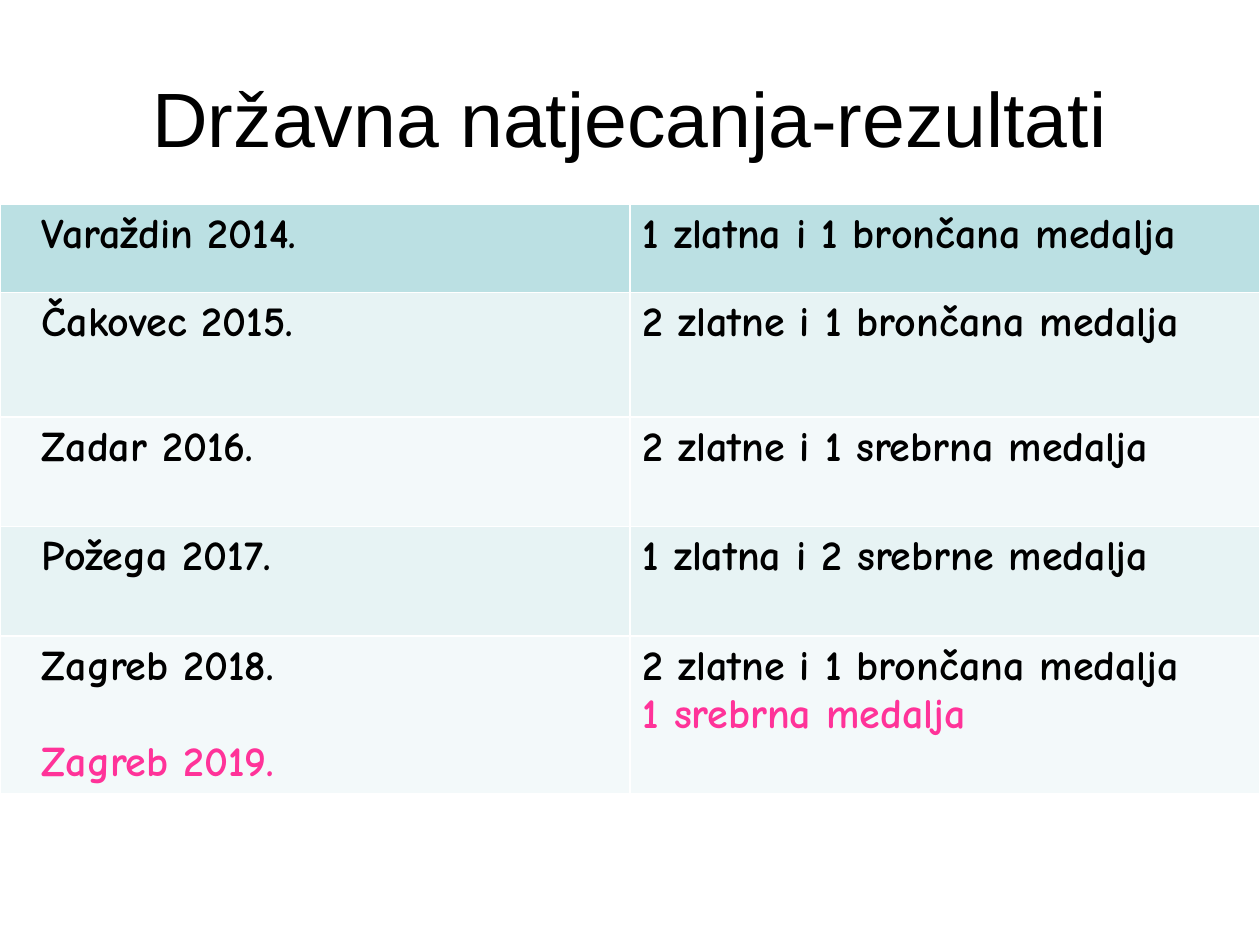
import dataclasses

import lxml.etree
import pptx
import pptx.dml.color
import pptx.enum.text
import pptx.oxml.ns
import pptx.util

Inches = pptx.util.Inches
Pt = pptx.util.Pt


@dataclasses.dataclass(frozen=True)
class Theme:
    text: str = "000000"
    accent: str = "FF3399"
    header_fill: str = "BBE0E3"
    band_fills: tuple[str, str] = ("E7F3F4", "F3F9FA")
    border: str = "FFFFFF"
    title_font: str = "Arial"
    table_font: str = "Comic Neue"
    title_size: int = 44
    table_size: int = 24


@dataclasses.dataclass(frozen=True)
class Line:
    text: str
    color: str
    space_before: float = 0


@dataclasses.dataclass(frozen=True)
class Competition:
    places: list[Line]
    medals: list[Line]
    height: float


THEME = Theme()


def black(text: str) -> list[Line]:
    return [Line(text, THEME.text)]


COMPETITIONS = [
    Competition(black("Varaždin 2014."), black("1 zlatna i 1 brončana medalja"), 0.7),
    Competition(black("Čakovec 2015."), black("2 zlatne i 1 brončana medalja"), 0.99),
    Competition(black("Zadar 2016."), black("2 zlatne i 1 srebrna medalja"), 0.87),
    Competition(black("Požega 2017."), black("1 zlatna i 2 srebrne medalja"), 0.87),
    Competition(
        black("Zagreb 2018.") + [Line("Zagreb 2019.", THEME.accent, 27.5)],
        black("2 zlatne i 1 brončana medalja") + [Line("1 srebrna medalja", THEME.accent)],
        1.25,
    ),
]


def write(paragraph, text: str, *, font: str, size: float, color: str,
          bold: bool = False, align=None, space_before: float = 0) -> None:
    paragraph.alignment = align
    if space_before:
        paragraph.space_before = Pt(space_before)
    run = paragraph.add_run()
    run.text = text
    run.font.name = font
    run.font.size = Pt(size)
    run.font.bold = bold
    run.font.color.rgb = pptx.dml.color.RGBColor.from_string(color)


def add_borders(cell, color: str, width: float) -> None:
    properties = cell._tc.get_or_add_tcPr()
    qn = pptx.oxml.ns.qn
    for side in ("lnL", "lnR", "lnT", "lnB"):
        border = lxml.etree.SubElement(properties, qn(f"a:{side}"), w=str(Pt(width)))
        fill = lxml.etree.SubElement(border, qn("a:solidFill"))
        lxml.etree.SubElement(fill, qn("a:srgbClr"), val=color)


def fill_cell(cell, lines: list[Line], fill: str, left_margin: float) -> None:
    add_borders(cell, THEME.border, 1)
    cell.fill.solid()
    cell.fill.fore_color.rgb = pptx.dml.color.RGBColor.from_string(fill)
    cell.margin_left = Inches(left_margin)
    frame = cell.text_frame
    for index, line in enumerate(lines):
        paragraph = frame.add_paragraph() if index else frame.paragraphs[0]
        write(paragraph, line.text, font=THEME.table_font, size=THEME.table_size,
              color=line.color, bold=True, space_before=line.space_before)


def add_title(slide, text: str) -> None:
    title = slide.shapes.title
    title.left, title.top = Inches(0.5), Inches(0.3)
    title.width, title.height = Inches(9), Inches(1.25)
    title.text_frame.vertical_anchor = pptx.enum.text.MSO_ANCHOR.MIDDLE
    write(title.text_frame.paragraphs[0], text, font=THEME.title_font,
          size=THEME.title_size, color=THEME.text,
          align=pptx.enum.text.PP_ALIGN.CENTER)


def add_results(slide, competitions: list[Competition]) -> None:
    height = sum(competition.height for competition in competitions)
    results = slide.shapes.add_table(len(competitions), 2, Inches(0), Inches(1.62),
                                     Inches(10), Inches(height)).table
    for index, competition in enumerate(competitions):
        results.rows[index].height = Inches(competition.height)
        fill = THEME.band_fills[(index - 1) % 2] if index else THEME.header_fill
        fill_cell(results.cell(index, 0), competition.places, fill, 0.33)
        fill_cell(results.cell(index, 1), competition.medals, fill, 0.1)


def main() -> None:
    deck = pptx.Presentation()
    deck.slide_width, deck.slide_height = Inches(10), Inches(7.5)
    # Title Only layout
    slide = deck.slides.add_slide(deck.slide_layouts[5])
    add_title(slide, "Državna natjecanja-rezultati")
    add_results(slide, COMPETITIONS)
    deck.save("out.pptx")


if __name__ == "__main__":
    main()
